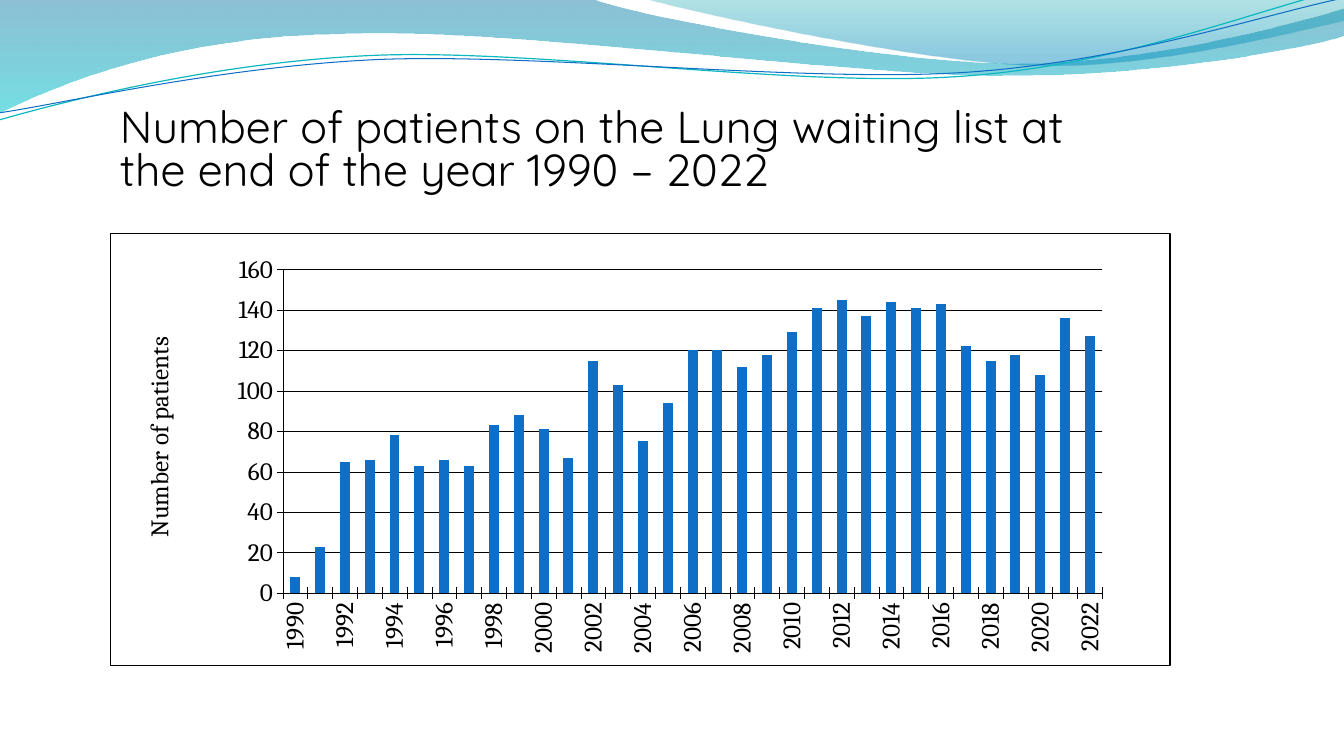
import lxml.etree
import pptx
import pptx.chart.data
import pptx.dml.color
import pptx.enum.chart
import pptx.enum.text
import pptx.oxml
import pptx.oxml.ns
import pptx.util

PX = 9144  # EMU in one px, 100 px to the inch
qn = pptx.oxml.ns.qn

FIRST_YEAR = 1990
PATIENTS = [8, 23, 65, 66, 78, 63, 66, 63, 83, 88, 81, 67, 115, 103, 75, 94, 120,
            120, 112, 118, 129, 141, 145, 137, 144, 141, 143, 122, 115, 118, 108,
            136, 127]

# Each wave is a start point, then lines (x, y) and curves (x1, y1, x2, y2, x, y).
BROAD_WAVE = [(0, 0), (587, -1), (634, 17, 884, 63, 1011, 63),
              (1137, 63, 1277, 26, 1333, 9), (1334, 36),
              (1311, 44, 1159, 76, 994, 75), (829, 75, 509, 28, 343, 34),
              (172, 36, 61, 83, -2, 113), (0, 0)]
RIGHT_WAVE = [(638, -1), (679, 11, 909, 62, 1025, 65),
              (1140, 69, 1282, 32, 1333, 21), (1333, 0), (638, -1)]
TEAL_LINE = [(-1, 119), (63, 101, 210, 62, 369, 55),
             (527, 48, 789, 87, 949, 76), (1110, 66, 1251, 8, 1330, -10)]
BLUE_LINE = [(-1, 112), (62, 103, 218, 66, 377, 59),
             (537, 53, 796, 82, 955, 72), (1114, 62, 1255, 14, 1333, -2)]


def px(length):
    return pptx.util.Emu(length * PX)


def rgb(hex_colour):
    return pptx.dml.color.RGBColor.from_string(hex_colour)


def set_font(font, size, name, colour):
    font.size = pptx.util.Pt(size)
    font.name = name
    font.bold = False
    font.color.rgb = rgb(colour)


def set_line(line, colour, width):
    line.color.rgb = rgb(colour)
    line.width = pptx.util.Pt(width)


def write_text(frame, text, size, font, colour, spacing=None, align=None):
    paragraph = frame.paragraphs[0]
    paragraph.line_spacing = spacing
    paragraph.alignment = align
    run = paragraph.add_run()
    run.text = text
    set_font(run.font, size, font, colour)


def bend(shape, segments):
    """Join the three line ends of each curved segment into one Bézier curve."""
    line_ends = iter(list(shape.element.iter(qn("a:lnTo"))))
    for segment in segments:
        first = next(line_ends)
        if len(segment) == 6:
            curve = lxml.etree.Element(qn("a:cubicBezTo"))
            first.addprevious(curve)
            for line_end in (first, next(line_ends), next(line_ends)):
                curve.append(line_end[0])
                line_end.getparent().remove(line_end)


def place(chart_part, chart_size, x, y, size=None):
    """Fix a part of the chart at px from the chart's corner."""
    layout = chart_part.find(qn("c:layout"))
    if layout is None:
        layout = lxml.etree.Element(qn("c:layout"))
        chart_part.insert(0, layout)
    width, height = chart_size
    settings = {"xMode": "edge", "yMode": "edge", "x": x / width, "y": y / height}
    if size:
        settings = {"layoutTarget": "inner", **settings,
                    "w": size[0] / width, "h": size[1] / height}
    manual = lxml.etree.SubElement(layout, qn("c:manualLayout"))
    for key, value in settings.items():
        lxml.etree.SubElement(manual, qn(f"c:{key}")).set("val", str(value))


def turn_upwards(body):
    body.set("rot", "-5400000")
    body.set("vert", "horz")


class WaitingListSlide:
    ink = "000000"
    blue = "0F6FC6"
    teal = "0AB8BF"
    title_font = "Quicksand"
    chart_font = "Cambria"

    def __init__(self, presentation):
        self.slide = presentation.slides.add_slide(presentation.slide_layouts[5])

    def add_wave(self, wave, closed):
        start, *segments = wave
        points = [(px(segment[i]), px(segment[i + 1]))
                  for segment in segments for i in range(0, len(segment), 2)]
        builder = self.slide.shapes.build_freeform(px(start[0]), px(start[1]))
        builder.add_line_segments(points, close=closed)
        shape = builder.convert_to_shape()
        bend(shape, segments)
        shape.shadow.inherit = False
        return shape

    def add_filled_wave(self, wave, *stops):
        """Fill a wave downwards; each stop is (position, colour, opacity in %)."""
        shape = self.add_wave(wave, True)
        shape.line.fill.background()
        shape.fill.gradient()
        shape.fill.gradient_angle = 270
        for stop, (position, colour, _) in zip(shape.fill.gradient_stops, stops):
            stop.position = position
            stop.color.rgb = rgb(colour)
        colours = shape.element.spPr.findall(".//" + qn("a:srgbClr"))
        for colour, (_, _, opacity) in zip(colours, stops):
            lxml.etree.SubElement(colour, qn("a:alpha")).set("val", str(opacity * 1000))

    def add_line_wave(self, wave, colour, width):
        shape = self.add_wave(wave, False)
        shape.fill.background()
        set_line(shape.line, colour, width)

    def add_title(self, text, left, top, width, height):
        title = self.slide.shapes.title
        title.left, title.top = px(left), px(top)
        title.width, title.height = px(width), px(height)
        frame = title.text_frame
        frame.word_wrap = True
        frame.auto_size = pptx.enum.text.MSO_AUTO_SIZE.NONE
        frame.vertical_anchor = pptx.enum.text.MSO_ANCHOR.TOP
        write_text(frame, text, size=32, font=self.title_font, colour=self.ink,
                   spacing=0.8, align=pptx.enum.text.PP_ALIGN.LEFT)

    def style_axis(self, axis):
        axis.major_tick_mark = pptx.enum.chart.XL_TICK_MARK.CROSS
        set_font(axis.tick_labels.font, 18, self.chart_font, self.ink)
        set_line(axis.format.line, self.ink, 0.25)

    def add_patient_chart(self, left, top, width, height):
        data = pptx.chart.data.CategoryChartData()
        data.categories = [str(FIRST_YEAR + i) for i in range(len(PATIENTS))]
        data.add_series("Series 1", PATIENTS)
        chart = self.slide.shapes.add_chart(
            pptx.enum.chart.XL_CHART_TYPE.COLUMN_STACKED,
            px(left), px(top), px(width), px(height), data).chart
        chart.has_title = False
        chart.has_legend = False
        set_font(chart.font, 18, self.chart_font, self.ink)

        plot = chart.plots[0]
        plot.gap_width, plot.overlap = 150, 100
        plot.vary_by_categories = False
        fill = plot.series[0].format.fill
        fill.solid()
        fill.fore_color.rgb = rgb(self.blue)

        years, counts = chart.category_axis, chart.value_axis
        self.style_axis(years)
        self.style_axis(counts)
        turn_upwards(years._element.txPr.bodyPr)
        skip = lxml.etree.Element(qn("c:tickLblSkip"))
        skip.set("val", "2")
        years._element.find(qn("c:noMultiLvlLbl")).addprevious(skip)

        counts.minimum_scale, counts.maximum_scale, counts.major_unit = 0, 160, 20
        counts.has_major_gridlines = True
        set_line(counts.major_gridlines.format.line, self.ink, 0.25)
        frame = counts.axis_title.text_frame
        write_text(frame, "Number of patients", size=18, font=self.chart_font,
                   colour=self.ink)
        turn_upwards(frame._txBody.bodyPr)
        chart_size = (width, height)
        place(counts._element.find(qn("c:title")), chart_size, 27, 99)

        chart_root = chart.element.find(qn("c:chart"))
        place(chart_root.find(qn("c:plotArea")), chart_size, 171, 36, size=(814, 322))
        chart_root.addnext(pptx.oxml.parse_xml(
            f'<c:spPr {pptx.oxml.ns.nsdecls("c", "a")}><a:noFill/>'
            f'<a:ln w="{pptx.util.Pt(0.96)}"><a:solidFill>'
            f'<a:srgbClr val="{self.ink}"/></a:solidFill></a:ln></c:spPr>'))


def main():
    presentation = pptx.Presentation()
    presentation.slide_width, presentation.slide_height = px(1333), px(750)
    page = WaitingListSlide(presentation)
    page.add_filled_wave(BROAD_WAVE, (0, "0074A1", 45), (1, "00C6CF", 55))
    page.add_filled_wave(RIGHT_WAVE, (0, "00A1A9", 30), (0.8, "008BBF", 45))
    page.add_line_wave(TEAL_LINE, page.teal, 0.85)
    page.add_line_wave(BLUE_LINE, page.blue, 0.75)
    page.add_title("Number of patients on the Lung waiting list at the end of "
                   "the year 1990 – 2022", 109, 103, 995, 106)
    page.add_patient_chart(109, 231, 1052, 430)
    presentation.save("out.pptx")


if __name__ == "__main__":
    main()
